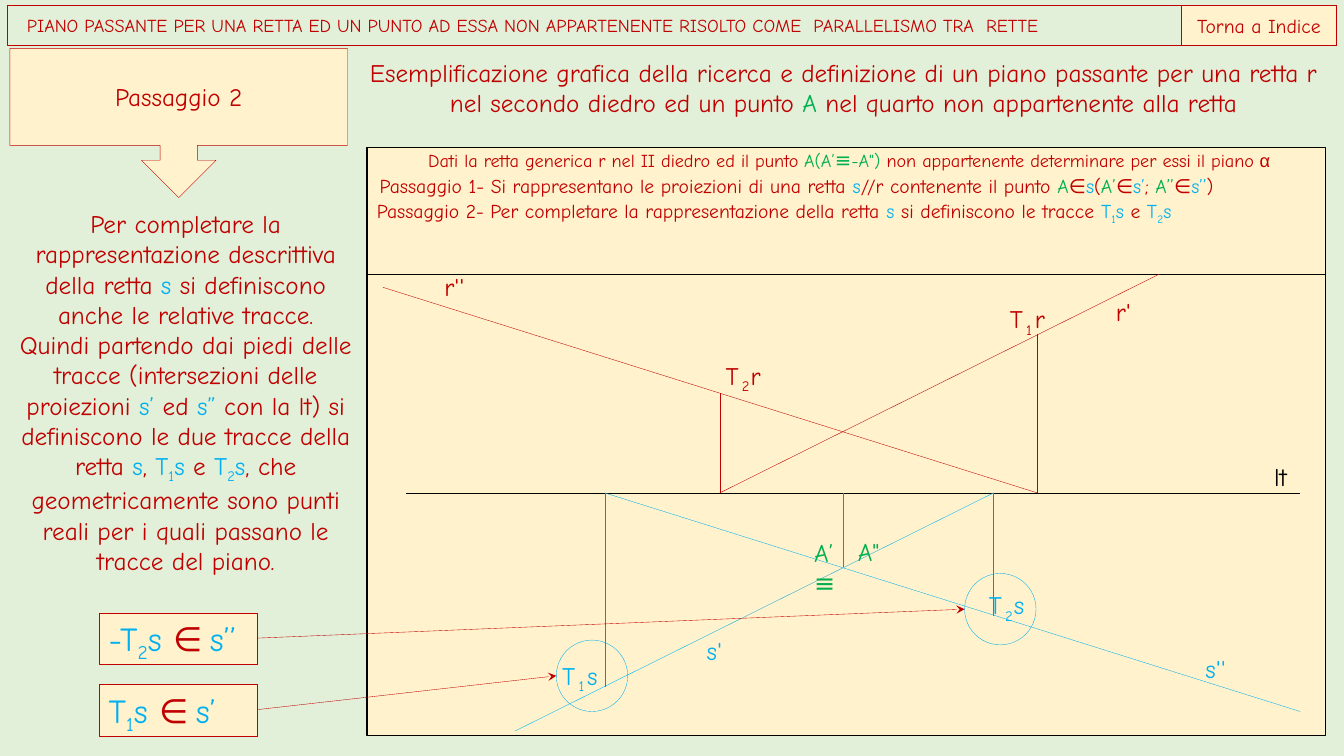
from dataclasses import dataclass
from lxml.etree import SubElement
from pptx import Presentation
from pptx.dml.color import RGBColor
from pptx.enum.shapes import MSO_CONNECTOR, MSO_SHAPE
from pptx.enum.text import MSO_ANCHOR, MSO_AUTO_SIZE, PP_ALIGN
from pptx.oxml.ns import qn
from pptx.util import Cm, Pt

MINT = RGBColor(0xE2, 0xF0, 0xD9)
CREAM = RGBColor(0xFF, 0xF2, 0xCC)
RED = RGBColor(0xC0, 0x00, 0x00)
GREEN = RGBColor(0x00, 0xB0, 0x50)
SKY = RGBColor(0x00, 0xB0, 0xF0)
BLUE = RGBColor(0x44, 0x72, 0xC4)
BLACK = RGBColor(0, 0, 0)
FONT = "Comic Neue"
THIN = Pt(0.25)


@dataclass
class Bit:
    text: str
    colour: RGBColor = RED
    font: str = None
    size: float = None
    sub: bool = False


def trace(digit):
    return [Bit("T", SKY), Bit(digit, SKY, sub=True), Bit("s", SKY)]


def write(shape, bits, size, align=PP_ALIGN.LEFT, anchor=MSO_ANCHOR.TOP):
    frame = shape.text_frame
    frame.word_wrap = True
    frame.auto_size = MSO_AUTO_SIZE.NONE
    frame.vertical_anchor = anchor
    para = frame.paragraphs[0]
    para.alignment = align
    para.font.name = FONT
    para.font.size = Pt(size)
    for bit in bits:
        run = para.add_run()
        run.text = bit.text
        run.font.color.rgb = bit.colour
        if bit.font:
            run.font.name = bit.font
        if bit.size:
            run.font.size = Pt(bit.size)
        if bit.sub:
            run.font._element.set("baseline", "-25000")
    return frame


def text(slide, box, bits, size, align=PP_ALIGN.LEFT):
    area = slide.shapes.add_textbox(*map(Cm, box))
    return write(area, bits, size, align)


def bare(frame):
    frame.margin_left = frame.margin_right = 0
    frame.margin_top = frame.margin_bottom = 0


def label(slide, x, y, bit, wrap=False):
    frame = text(slide, (x, y, 0.94, 0.77), [bit], 18)
    bare(frame)
    frame.word_wrap = wrap


def shape(slide, kind, box, line=RED, fill=None):
    item = slide.shapes.add_shape(kind, *map(Cm, box))
    item.shadow.inherit = False
    if fill is None:
        item.fill.background()
    else:
        item.fill.solid()
        item.fill.fore_color.rgb = fill
    item.line.color.rgb = line
    item.line.width = THIN
    return item


def line(slide, start, end, colour, arrow=False):
    item = slide.shapes.add_connector(MSO_CONNECTOR.STRAIGHT, *map(Cm, start + end))
    item.line.color.rgb = colour
    item.line.width = THIN
    if arrow:
        SubElement(item.line._get_or_add_ln(), qn("a:tailEnd"), type="stealth")
    SubElement(item._element.spPr, qn("a:effectLst"))


def banner(slide, box):
    x, y, w, h = box
    title = slide.shapes.title
    title.left, title.top, title.width, title.height = map(Cm, box)
    title.line.color.rgb = RED
    title.line.width = THIN
    name = ("PIANO PASSANTE PER UNA RETTA ED UN PUNTO AD ESSA NON APPARTENENTE "
            "RISOLTO COME  PARALLELISMO TRA  RETTE")
    frame = write(title, [Bit(name)], 13, anchor=MSO_ANCHOR.MIDDLE)
    frame.margin_left = Cm(0.5)
    index = shape(slide, MSO_SHAPE.RECTANGLE, (x + w - 3.9, y, 3.9, h), fill=CREAM)
    write(index, [Bit("Torna a Indice")], 14, PP_ALIGN.CENTER, MSO_ANCHOR.MIDDLE)


def heading(slide, box):
    text(slide, box, [
        Bit("Esemplificazione grafica della ricerca e definizione di un piano passante "
            "per una retta r nel secondo diedro ed un punto "),
        Bit("A ", GREEN), Bit("nel quarto non appartenente alla retta")],
        18, PP_ALIGN.CENTER)


def sidebar(slide, box):
    x, y, w, h = box
    step = shape(slide, MSO_SHAPE.DOWN_ARROW_CALLOUT, (x, y, 8.51, 3.76), fill=CREAM)
    frame = write(step, [Bit("Passaggio 2")], 18, PP_ALIGN.CENTER, MSO_ANCHOR.MIDDLE)
    text(slide, (x, y + 3.91, w, 10.26), [
        Bit("Per completare la rappresentazione descrittiva della retta "), Bit("s", SKY),
        Bit(" si definiscono anche le relative tracce. Quindi partendo dai piedi delle "
            "tracce (intersezioni delle proiezioni "),
        Bit("s’ ", SKY), Bit("ed "), Bit("s” ", SKY),
        Bit("con la lt) si definiscono le due tracce della retta "), Bit("s", SKY),
        Bit(", "), *trace("1"), Bit(" e "), *trace("2"),
        Bit(", che geometricamente sono punti reali per i quali passano le tracce "
            "del piano.")], 18, PP_ALIGN.CENTER)
    rows = [([Bit("-", SKY)], "2", "s’’"), ([], "1", "s’")]
    for i, (dash, digit, view) in enumerate(rows):
        card = shape(slide, MSO_SHAPE.RECTANGLE,
                     (x + 2.24, y + 14.22 + 1.81 * i, 3.99, 1.3), fill=CREAM)
        write(card, [*dash, *trace(digit), Bit(" ", SKY),
                     Bit("∈ ", font="Calibri"), Bit(view, SKY)], 24)


def steps(slide, box):
    """Places the three lines of statement at the top of the panel."""
    x, y, w, h = box
    given = text(slide, (x + 0.07, y + 0.03, w, 0.61), [
        Bit("Dati la retta generica r nel II diedro ed il punto "), Bit("A(A’", GREEN),
        Bit("≡", GREEN, size=14), Bit("-A\") ", GREEN),
        Bit("non appartenente determinare per essi il piano "),
        Bit("α", font="Arial")], 13, PP_ALIGN.CENTER)
    bare(given)
    text(slide, (x + 0.07, y + 0.56, w, 0.86), [
        Bit("Passaggio 1- Si rappresentano le proiezioni di una retta"), Bit(" s", SKY),
        Bit("//r contenente il punto "), Bit("A", GREEN), Bit("∈"), Bit("s", SKY),
        Bit("("), Bit("A’", GREEN), Bit("∈"), Bit("s’", SKY), Bit("; "),
        Bit("A’’", GREEN), Bit("∈"), Bit("s’’", SKY), Bit(")")], 14)
    text(slide, (x, y + 1.19, w, 0.86), [
        Bit("Passaggio 2- Per completare la rappresentazione della retta "),
        Bit("s", SKY), Bit(" si definiscono le tracce "),
        *trace("1"), Bit(" e "), *trace("2")], 14)


def drawing(slide, box):
    x, y, w, h = box
    shape(slide, MSO_SHAPE.RECTANGLE, box, BLACK, CREAM).line.width = 0
    top, base = 3.2, 8.71
    lines = [
        (0, top, w, top, BLACK), (0.99, base, 23.52, base, BLACK),
        (19.96, top, 8.89, base, RED), (0.4, 3.53, 16.89, base, RED),
        (12.01, base, 12.01, 10.59, GREEN),
        (15.79, base, 3.73, 14.71, SKY), (5.99, base, 23.52, 14.22, SKY),
        (8.89, base, 8.89, 6.2, RED), (16.89, base, 16.89, 4.7, RED),
        (5.99, base, 5.99, 13.61, BLUE), (15.79, base, 15.79, 11.81, BLUE)]
    for x1, y1, x2, y2, colour in lines:
        line(slide, (x + x1, y + y1), (x + x2, y + y2), colour)
    names = [
        (22.86, 7.92, "lt", BLACK), (12.37, 9.8, "A\"", GREEN),
        (18.87, 3.76, "r'", RED), (1.95, 3.12, "r''", RED),
        (8.56, 12.29, "s'", SKY), (21.13, 12.75, "s''", SKY)]
    for left, up, name, colour in names:
        label(slide, x + left, y + up, Bit(name, colour))
    label(slide, x + 11.27, y + 9.83, Bit("A’≡", GREEN), wrap=True)
    marks = [(16.2, 3.94, "1", "r", RED), (9.04, 5.36, "2", "r", RED),
             (4.92, 12.93, "1", "s", SKY), (15.67, 11.15, "2", "s", SKY)]
    for left, up, digit, name, colour in marks:
        label(slide, x + left, y + up, Bit("T", colour))
        label(slide, x + left + 0.41, y + up, Bit(digit, colour, sub=True))
        label(slide, x + left + 0.63, y + up, Bit(name, colour))
    for left, up, start in [(4.77, 12.42, 17.88), (15.06, 10.74, 16.08)]:
        shape(slide, MSO_SHAPE.OVAL, (x + left, y + up, 1.8, 1.8), SKY)
        line(slide, (6.5, start), (x + left, y + up + 0.9), RED, arrow=True)


def main():
    deck = Presentation()
    deck.slide_width, deck.slide_height = Cm(33.87), Cm(19.05)
    slide = deck.slides.add_slide(deck.slide_layouts[5])
    slide.background.fill.solid()
    slide.background.fill.fore_color.rgb = MINT
    panel = (9.25, 3.71, 24.16, 14.83)
    banner(slide, (0.18, 0.14, 33.5, 1))
    heading(slide, (8.76, 1.32, 24.99, 1.8))
    sidebar(slide, (0.25, 1.22, 8.86, 17.32))
    drawing(slide, panel)
    steps(slide, panel)
    deck.save("out.pptx")


if __name__ == "__main__":
    main()
